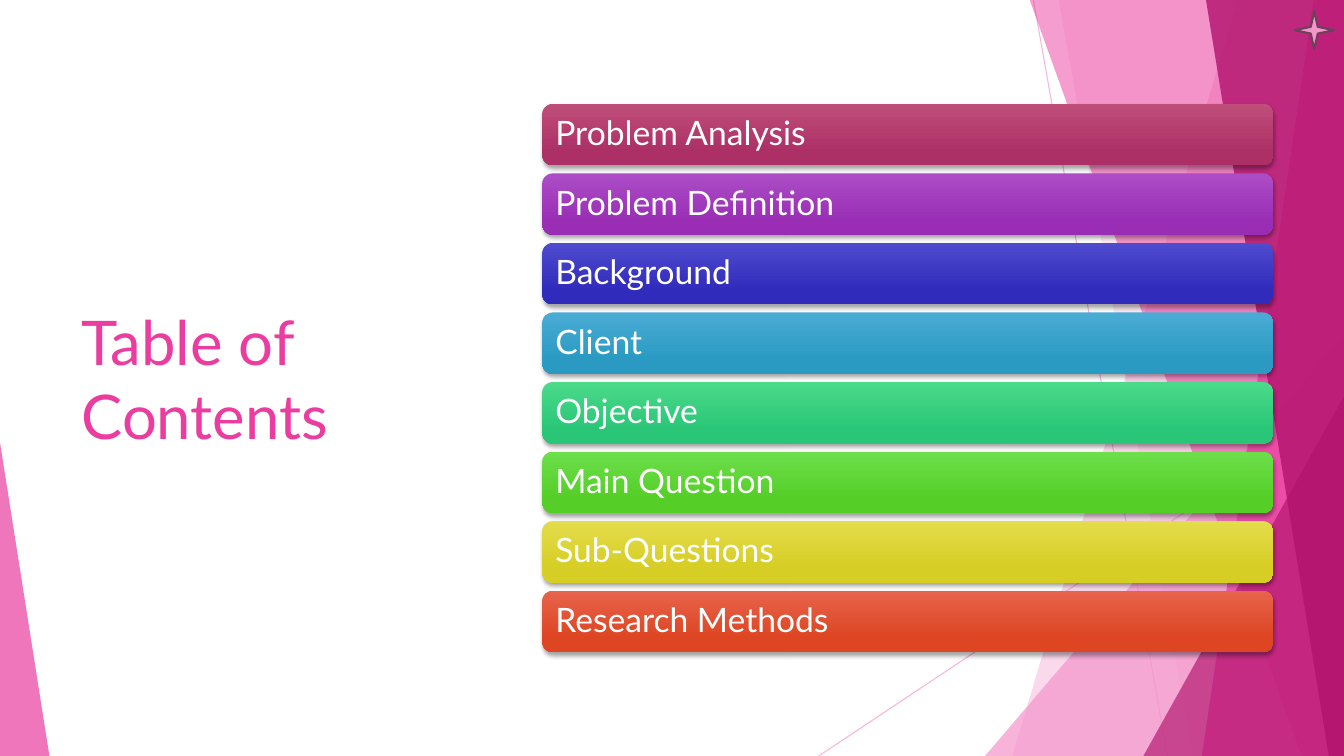
"""Build the table of contents slide with coloured bars over a faceted background."""
from dataclasses import dataclass

from lxml import etree
from pptx import Presentation
from pptx import slide as sl
from pptx import util as u
from pptx.dml.color import RGBColor
from pptx.enum import shapes, text
from pptx.oxml import ns
from pptx.shapes import base
from pptx.text import text as tx

PX = 9144
WIDTH, HEIGHT = 1333, 750
FONT = "Lato"
COLORS = {
    "pale": "F496CB",
    "pink": "EB3D9F",
    "deep": "B2136D",
    "plum": "6B4259",
    "white": "FFFFFF",
    "black": "000000",
}
BAR_LEFT, BAR_TOP, BAR_WIDTH, BAR_HEIGHT, BAR_PITCH = 538, 103, 725, 61, 69


@dataclass
class Ray:
    start: tuple[int, int]
    end: tuple[int, int]


@dataclass
class Facet:
    top_left: int
    bottom_left: int
    color: str
    alpha: int


@dataclass
class Corner:
    left: int
    top: int
    width: int
    peak: int
    color: str
    alpha: int


@dataclass
class Bar:
    label: str
    light: str
    dark: str


RAYS = [Ray((1025, 0), (1158, HEIGHT)), Ray((WIDTH, 403), (812, HEIGHT))]
BACKGROUND = [
    Facet(1228, 1004, "pale", 36),
    Facet(1050, 1183, "pale", 20),
    Corner(977, 333, 356, 1, "pale", 72),
    Facet(1021, 1291, "pink", 50),
    Facet(1303, 1192, "pink", 70),
    Facet(1196, 1318, "deep", 80),
    Corner(1134, 393, 199, 1, "deep", 66),
    Corner(0, 439, 49, 0, "pink", 70),
]
BARS = [
    Bar("Problem Analysis", "BF4E79", "AC3066"),
    Bar("Problem Definition", "AC4DC7", "992EB4"),
    Bar("Background", "4E4BCF", "302BBB"),
    Bar("Client", "4AACD5", "2A9AC2"),
    Bar("Objective", "4ADA8A", "2AC677"),
    Bar("Main Question", "6CDF4B", "55CE27"),
    Bar("Sub-Questions", "E3DC4B", "D6CE24"),
    Bar("Research Methods", "E7634C", "DE4522"),
]


def px(*lengths: int) -> list[int]:
    return [length * PX for length in lengths]


def rgb(name: str) -> RGBColor:
    return RGBColor.from_string(COLORS[name])


def set_alpha(shape: base.BaseShape, percent: int) -> None:
    for color in shape._element.spPr.iter(ns.qn("a:srgbClr")):
        etree.SubElement(color, ns.qn("a:alpha"), val=str(percent * 1000))


def write(frame: tx.TextFrame, words: str, size: int, color: str) -> tx._Paragraph:
    frame.word_wrap = True
    frame.vertical_anchor = text.MSO_ANCHOR.MIDDLE
    frame.margin_left, frame.margin_top, frame.margin_right, frame.margin_bottom = px(10, 10, 10, 10)
    paragraph = frame.paragraphs[0]
    paragraph.alignment = text.PP_ALIGN.LEFT
    run = paragraph.add_run()
    run.text = words
    run.font.name = FONT
    run.font.size = u.Pt(size)
    run.font.color.rgb = rgb(color)
    return paragraph


def draw_ray(slide: sl.Slide, ray: Ray) -> None:
    connector = slide.shapes.add_connector(
        shapes.MSO_CONNECTOR.STRAIGHT, *px(*ray.start, *ray.end)
    )
    connector.line.color.rgb = rgb("pale")
    connector.line.width = u.Pt(0.75)
    set_alpha(connector, 70)
    etree.SubElement(connector._element.spPr, ns.qn("a:effectLst"))


def draw_background(slide: sl.Slide, piece: Facet | Corner) -> None:
    if isinstance(piece, Facet):
        builder = slide.shapes.build_freeform(piece.top_left, -1, scale=PX)
        builder.add_line_segments([(WIDTH, -1), (WIDTH, HEIGHT), (piece.bottom_left, HEIGHT)])
        shape = builder.convert_to_shape()
    else:
        shape = slide.shapes.add_shape(
            shapes.MSO_SHAPE.ISOSCELES_TRIANGLE,
            *px(piece.left, piece.top, piece.width, HEIGHT - piece.top),
        )
        shape.adjustments[0] = piece.peak
    shape.shadow.inherit = False
    shape.fill.solid()
    shape.fill.fore_color.rgb = rgb(piece.color)
    shape.line.fill.background()
    set_alpha(shape, piece.alpha)


def add_shadow(shape: base.BaseShape) -> None:
    shape.shadow.inherit = False
    effects = shape._element.spPr.find(ns.qn("a:effectLst"))
    shadow = etree.SubElement(
        effects, ns.qn("a:outerShdw"), blurRad=str(u.Pt(3)), dist=str(u.Pt(2)),
        dir="5400000", algn="ctr", rotWithShape="0",
    )
    color = etree.SubElement(shadow, ns.qn("a:srgbClr"), val=COLORS["black"])
    etree.SubElement(color, ns.qn("a:alpha"), val="35000")


def draw_bar(slide: sl.Slide, index: int, bar: Bar) -> None:
    shape = slide.shapes.add_shape(
        shapes.MSO_SHAPE.ROUNDED_RECTANGLE,
        *px(BAR_LEFT, BAR_TOP + index * BAR_PITCH, BAR_WIDTH, BAR_HEIGHT),
    )
    shape.fill.gradient()
    shape.fill.gradient_angle = 270
    stops = zip(shape.fill.gradient_stops, (bar.light, bar.dark), (0, 0.78))
    for stop, color, position in stops:
        stop.color.rgb = RGBColor.from_string(color)
        stop.position = position
    shape.line.fill.background()
    add_shadow(shape)
    write(shape.text_frame, bar.label, 24, "white").line_spacing = 0.9


def draw_star(slide: sl.Slide) -> None:
    star = slide.shapes.add_shape(shapes.MSO_SHAPE.STAR_4_POINT, *px(1284, 11, 39, 38))
    star.shadow.inherit = False
    star.fill.solid()
    star.fill.fore_color.rgb = rgb("pale")
    star.line.color.rgb = rgb("plum")
    star.line.width = u.Pt(1.5)


def main() -> None:
    presentation = Presentation()
    presentation.slide_width, presentation.slide_height = px(WIDTH, HEIGHT)
    slide = presentation.slides.add_slide(presentation.slide_layouts[6])
    for ray in RAYS:
        draw_ray(slide, ray)
    for piece in BACKGROUND:
        draw_background(slide, piece)
    title = slide.shapes.add_textbox(*px(71, 151, 388, 448))
    write(title.text_frame, "Table of Contents", 44, "pink")
    for index, bar in enumerate(BARS):
        draw_bar(slide, index, bar)
    draw_star(slide)
    presentation.save("out.pptx")


if __name__ == "__main__":
    main()
